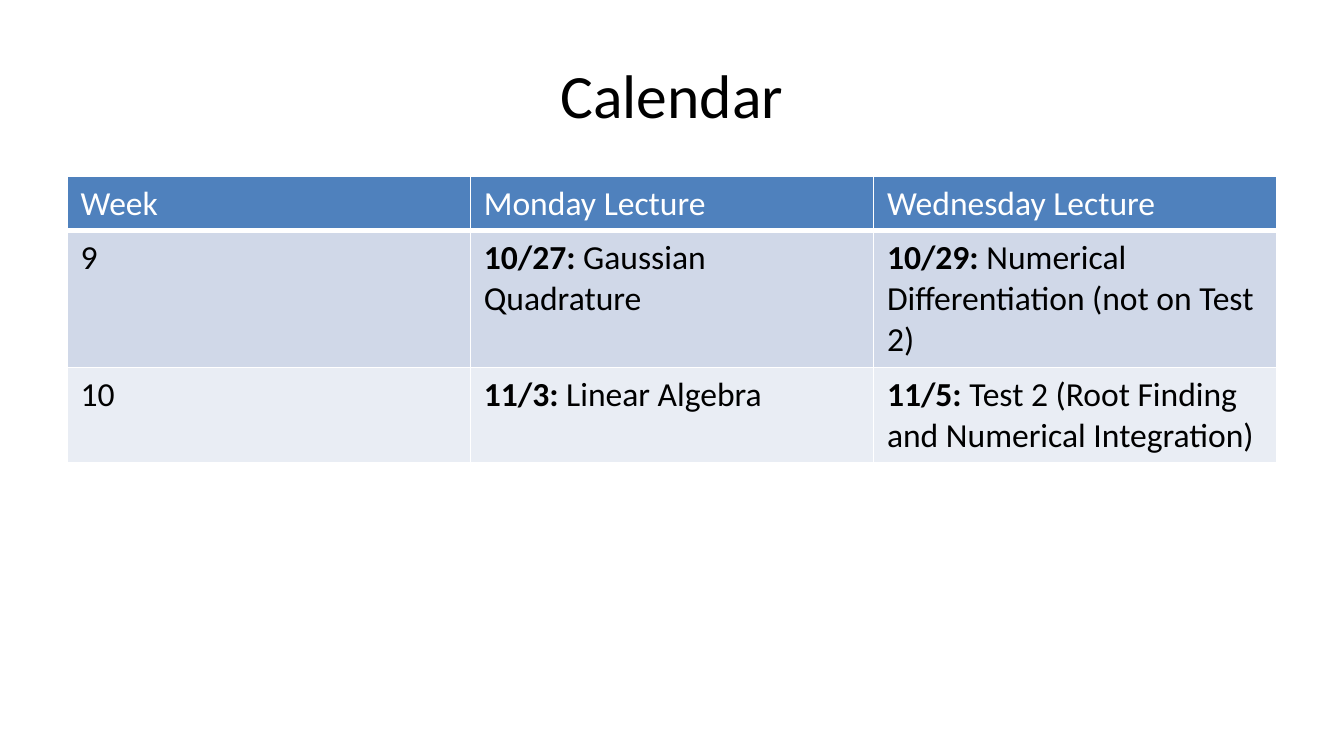
from lxml.etree import SubElement
from pptx import Presentation
from pptx.dml.color import RGBColor as RGB
from pptx.enum.text import MSO_ANCHOR as ANCHOR, PP_ALIGN as ALIGN
from pptx.oxml.ns import qn
from pptx.util import Pt

COLORS = {
    "text": "000000",
    "white": "FFFFFF",
    "header": "4F81BD",
    "odd": "D0D8E8",
    "even": "E9EDF4",
}
FONT = "Calibri"
ROWS = [
    [("", "Week"), ("", "Monday Lecture"), ("", "Wednesday Lecture")],
    [("", "9"), ("10/27:", " Gaussian Quadrature"),
     ("10/29:", " Numerical Differentiation (not on Test 2)")],
    [("", "10"), ("11/3:", " Linear Algebra"),
     ("11/5:", " Test 2 (Root Finding and Numerical Integration)")],
]
ROW_HEIGHTS = [29, 73, 51]


def color(name):
    return RGB.from_string(COLORS[name])


def set_font(font, size, name):
    font.name = FONT
    font.size = Pt(size)
    font.color.rgb = color(name)


def set_borders(cell, widths):
    tcPr = cell._tc.get_or_add_tcPr()
    for i, (side, width) in enumerate(widths.items()):
        ln = tcPr.makeelement(qn(f"a:ln{side}"), {"w": str(Pt(width))})
        fill = SubElement(ln, qn("a:solidFill"))
        SubElement(fill, qn("a:srgbClr"), val=COLORS["white"])
        tcPr.insert(i, ln)


def add_title(slide, text, left, top, width, height):
    sp = slide.shapes.title
    sp.left, sp.top, sp.width, sp.height = map(Pt, (left, top, width, height))
    tf = sp.text_frame
    tf.text = text
    tf.vertical_anchor = ANCHOR.MIDDLE
    p = tf.paragraphs[0]
    p.alignment = ALIGN.CENTER
    set_font(p.font, 33, "text")


def fill_cell(cell, label, text, row):
    cell.fill.solid()
    cell.fill.fore_color.rgb = color(("header", "odd", "even")[row])
    p = cell.text_frame.paragraphs[0]
    set_font(p.font, 18, "text" if row else "white")
    for part, bold in ((label, True), (text, False)):
        if part:
            r = p.add_run()
            r.text = part
            r.font.bold = bold
            set_font(r.font, 18, "text" if row else "white")
    set_borders(cell, {"L": 1, "R": 1, "T": 3 if row == 1 else 1,
                       "B": 1 if row else 3})


def add_calendar(slide, left, top, width, height):
    columns = len(ROWS[0])
    table = slide.shapes.add_table(
        len(ROWS), columns, Pt(left), Pt(top), Pt(width), Pt(height)).table
    for column in table.columns:
        column.width = Pt(width / columns)
    for i, cells in enumerate(ROWS):
        table.rows[i].height = Pt(ROW_HEIGHTS[i])
        for j, (label, text) in enumerate(cells):
            fill_cell(table.cell(i, j), label, text, i)


def main():
    prs = Presentation()
    prs.slide_width, prs.slide_height = Pt(720), Pt(405)
    slide = prs.slides.add_slide(prs.slide_layouts[5])
    add_title(slide, "Calendar", 36, 16.5, 648, 67.5)
    add_calendar(slide, 36, 94.5, 648, sum(ROW_HEIGHTS))
    prs.save("out.pptx")


if __name__ == "__main__":
    main()
